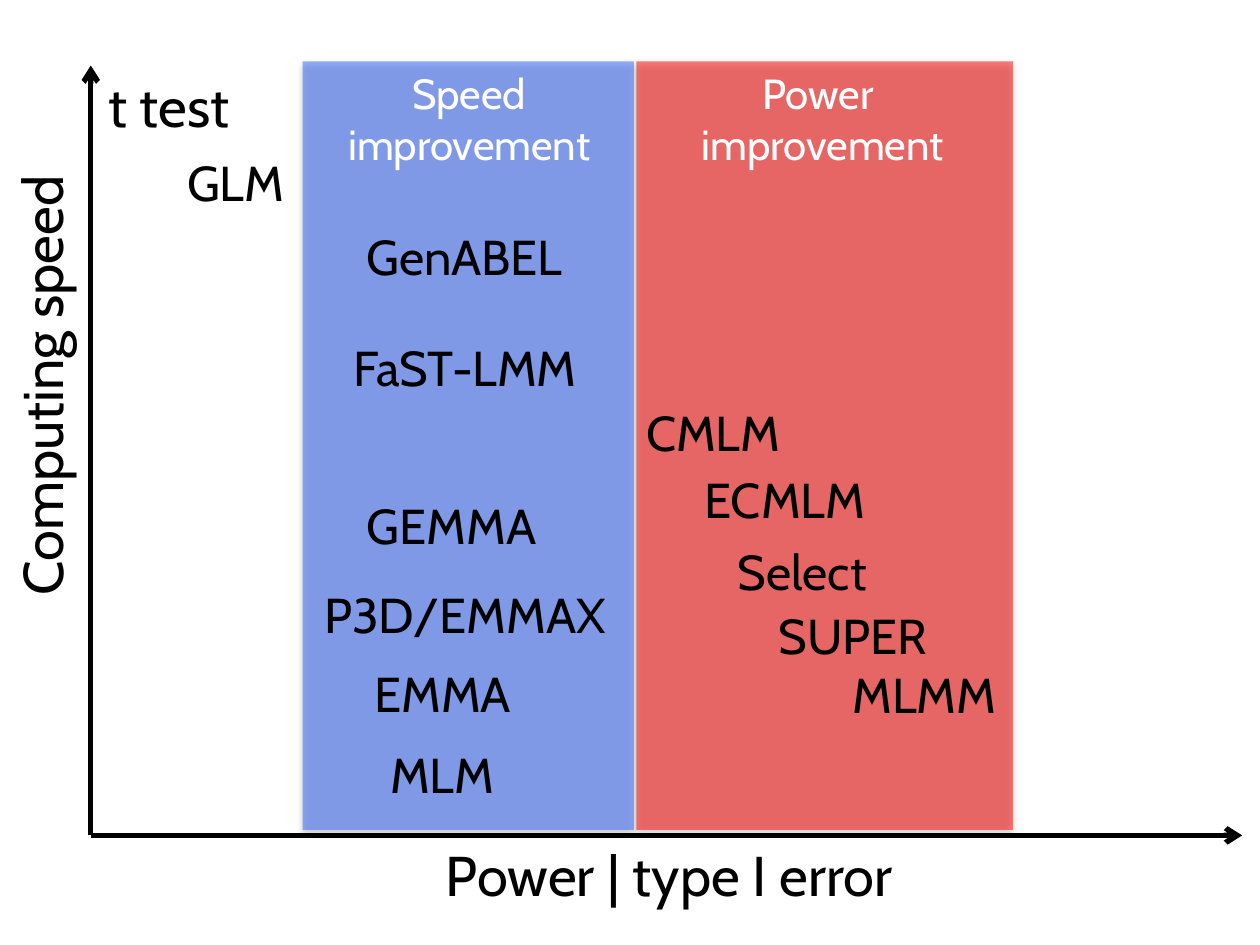
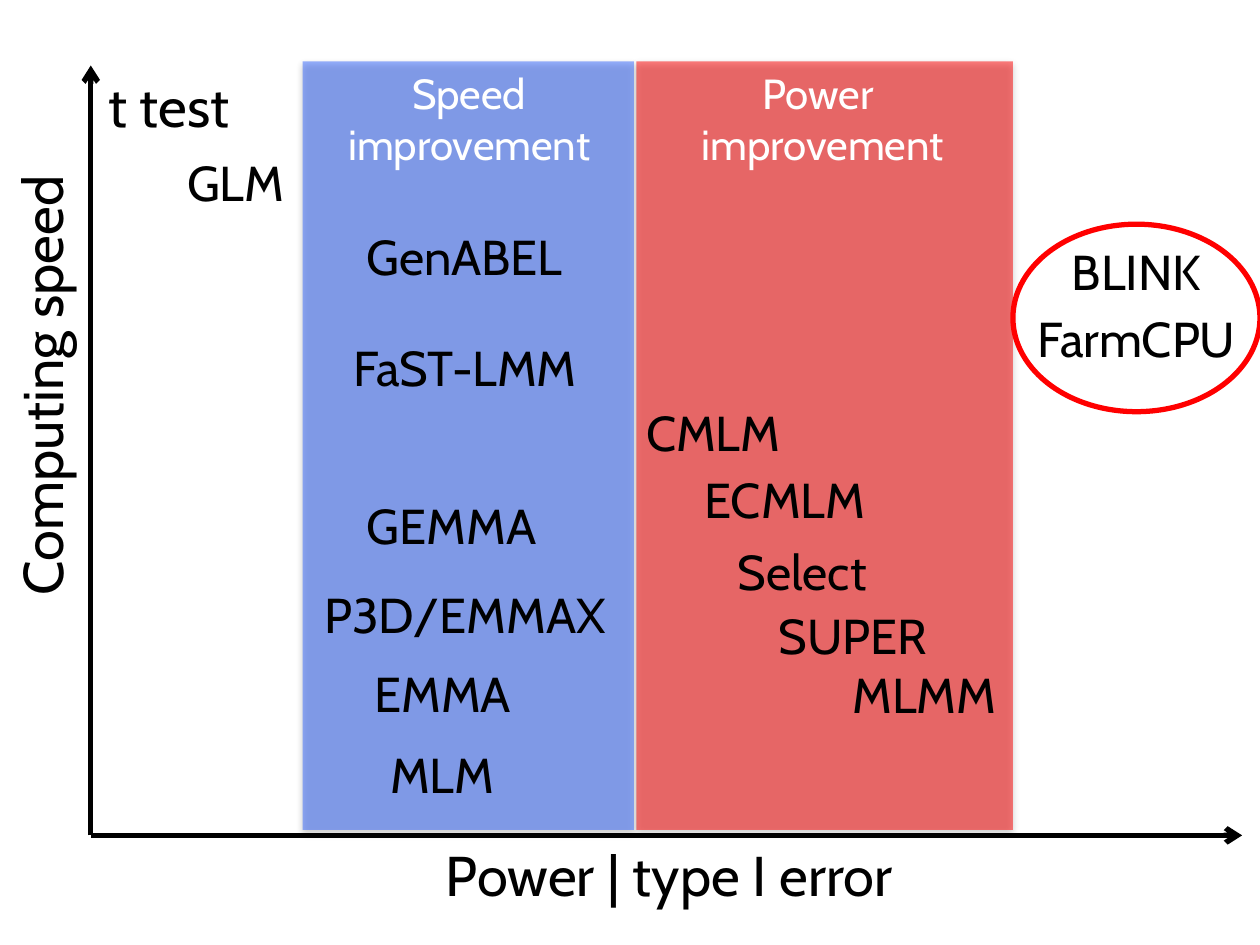
from typing import NamedTuple

from lxml.etree import SubElement
from pptx import Presentation
from pptx.dml.color import RGBColor
from pptx.enum.shapes import MSO_CONNECTOR as Connector, MSO_SHAPE as Preset
from pptx.enum.text import PP_ALIGN as Align
from pptx.oxml.ns import qn
from pptx.slide import Slide
from pptx.util import Cm, Pt

BLACK = RGBColor(0x00, 0x00, 0x00)
WHITE = RGBColor(0xFF, 0xFF, 0xFF)
RED = RGBColor(0xFF, 0x00, 0x00)
BLUE = RGBColor(0x33, 0x66, 0xFF)
FONT = "Cabin"
LINE_WIDTH = Pt(3)

# Lengths below are centimetres
BAND_TOP, BAND_HEIGHT = 1.24, 15.49
AXIS_ORIGIN = (1.83, 16.84)
AXIS_ENDS = ((25.04, 16.84), (1.83, 1.32))


class Band(NamedTuple):
    left: float
    width: float
    color: RGBColor
    heading: str
    heading_left: float
    heading_width: float


class Method(NamedTuple):
    name: str
    left: float
    top: float
    width: float
    size: int = 28


BANDS = (
    Band(12.83, 7.59, RED, "Power \nimprovement", 12.75, 7.67),
    Band(6.1, 6.68, BLUE, "Speed improvement", 6.17, 6.58),
)
METHODS = (
    # Basic tests
    Method("t test", 1.83, 1.32, 3.15, 32),
    Method("GLM", 3.33, 2.95, 2.84),
    # Speed improvement
    Method("GenABEL", 6.73, 4.45, 5.26),
    Method("FaST-LMM", 6.1, 6.68, 6.55),
    Method("GEMMA", 6.73, 9.86, 4.75),
    Method("P3D/EMMAX", 6.1, 11.66, 6.55),
    Method("EMMA", 6.73, 13.26, 4.39),
    Method("MLM", 7.34, 14.88, 3.15),
    # Power improvement
    Method("CMLM", 12.57, 7.98, 3.61),
    Method("ECMLM", 13.39, 9.35, 4.85),
    Method("Select", 14.12, 10.8, 4.11),
    Method("SUPER", 15.14, 12.09, 4.11),
    Method("MLMM", 16.48, 13.28, 4.32),
)
NEW_METHODS = (
    Method("BLINK", 20.42, 4.75, 4.98),
    Method("FarmCPU", 20.42, 6.1, 4.98),
)


def add_text(slide: Slide, text: str, left: float, top: float, width: float,
             height: float = 1.45, *, size: int = 28, color: RGBColor = BLACK,
             align: Align = Align.CENTER, rotation: float = 0) -> None:
    box = slide.shapes.add_textbox(Cm(left), Cm(top), Cm(width), Cm(height))
    box.rotation = rotation
    box.text_frame.word_wrap = True
    box.text_frame.text = text
    for paragraph in box.text_frame.paragraphs:
        paragraph.alignment = align
        font = paragraph.runs[0].font
        font.name, font.size = FONT, Pt(size)
        font.color.rgb = color


def add_alpha(color_parent, percent: int) -> None:
    """Make the colour inside the given element partly transparent."""
    color = color_parent.find(qn("a:srgbClr"))
    SubElement(color, qn("a:alpha"), val=str(percent * 1000))


def add_band(slide: Slide, band: Band) -> None:
    rect = slide.shapes.add_shape(Preset.RECTANGLE, Cm(band.left), Cm(BAND_TOP),
                                  Cm(band.width), Cm(BAND_HEIGHT))
    rect.fill.solid()
    rect.fill.fore_color.rgb = band.color
    rect.line.fill.background()
    rect.shadow.inherit = False
    properties = rect._element.spPr
    add_alpha(properties.find(qn("a:solidFill")), 50)
    # Soft shadow straight below
    shadow = SubElement(properties.find(qn("a:effectLst")), qn("a:outerShdw"),
                        blurRad=str(Pt(4)), dist=str(Pt(2)), dir="5400000",
                        rotWithShape="0")
    SubElement(shadow, qn("a:srgbClr"), val=str(BLACK))
    add_alpha(shadow, 38)


def add_axis(slide: Slide, end: tuple[float, float]) -> None:
    axis = slide.shapes.add_connector(Connector.STRAIGHT,
                                      *map(Cm, AXIS_ORIGIN + end))
    axis.line.color.rgb = BLACK
    axis.line.width = LINE_WIDTH
    properties = axis._element.spPr
    SubElement(properties.find(qn("a:ln")), qn("a:tailEnd"), type="arrow")
    SubElement(properties, qn("a:effectLst"))


def add_methods(slide: Slide, methods: tuple[Method, ...]) -> None:
    for method in methods:
        add_text(slide, method.name, method.left, method.top, method.width,
                 size=method.size)


def add_highlight(slide: Slide) -> None:
    ring = slide.shapes.add_shape(Preset.OVAL, Cm(20.42), Cm(4.52), Cm(4.98), Cm(3.78))
    ring.fill.background()
    ring.line.color.rgb = RED
    ring.line.width = LINE_WIDTH
    ring.shadow.inherit = False


def add_comparison(deck) -> Slide:
    """Add a slide with the bands, the axes and the established methods."""
    slide = deck.slides.add_slide(deck.slide_layouts[6])
    for band in BANDS:
        add_band(slide, band)
    for end in AXIS_ENDS:
        add_axis(slide, end)
    add_text(slide, "Computing speed", -3.94, 6.65, 9.58, 1.63,
             size=32, align=Align.LEFT, rotation=270)
    add_text(slide, "Power | type I error", 8.74, 16.81, 10.69, 1.63,
             size=32, align=Align.LEFT)
    add_methods(slide, METHODS)
    for band in BANDS:
        add_text(slide, band.heading, band.heading_left, BAND_TOP,
                 band.heading_width, 2.31, size=24, color=WHITE)
    return slide


def main() -> None:
    deck = Presentation()
    deck.slide_width, deck.slide_height = Cm(25.4), Cm(19.05)

    # Established methods
    add_comparison(deck)

    # The same chart with the new methods ringed
    outlook = add_comparison(deck)
    add_methods(outlook, NEW_METHODS)
    add_highlight(outlook)

    deck.save("out.pptx")


if __name__ == "__main__":
    main()
